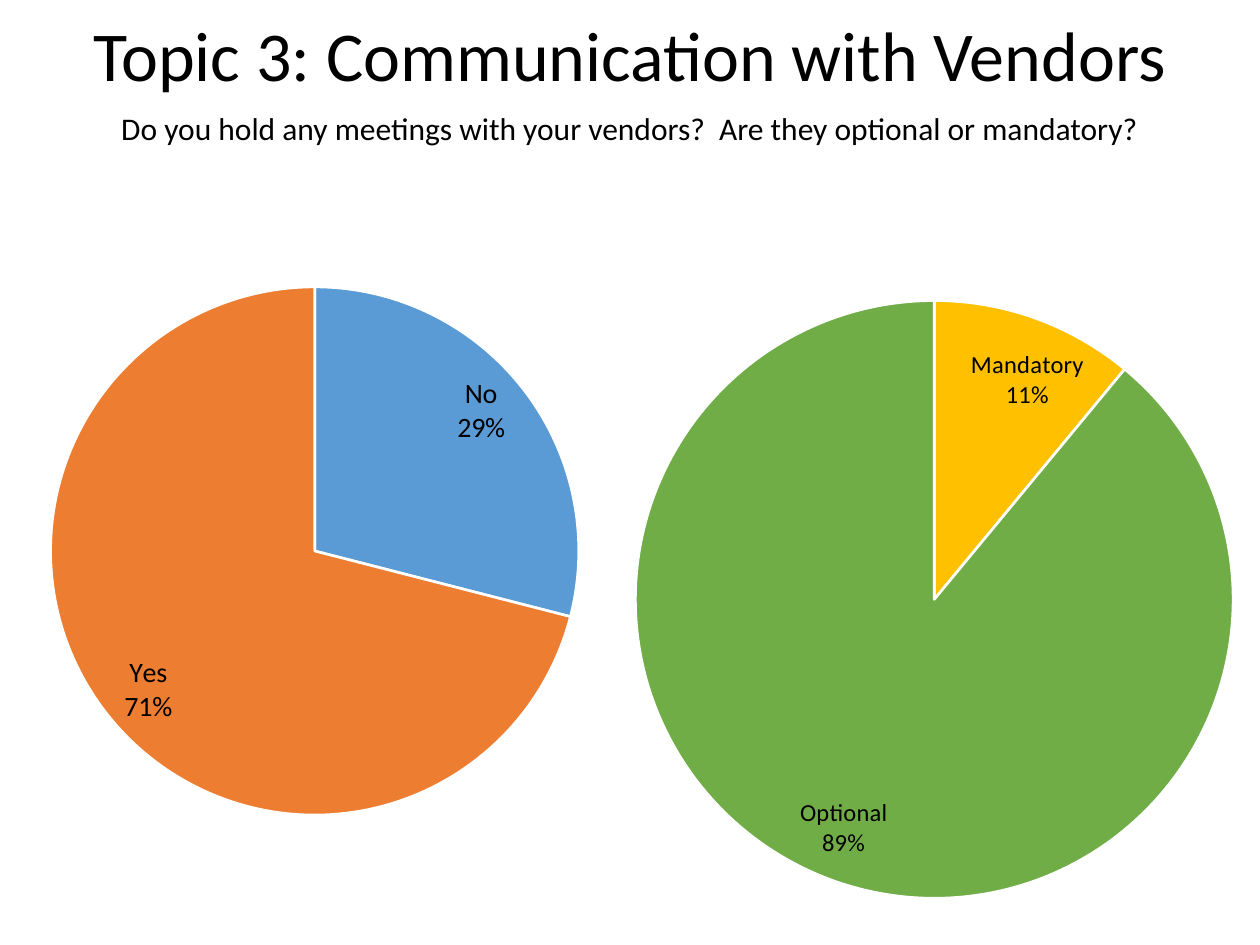
from lxml.etree import Element
from pptx import Presentation
from pptx.chart.data import CategoryChartData as Data
from pptx.dml.color import RGBColor as Rgb
from pptx.enum.chart import XL_CHART_TYPE as Kind, XL_LABEL_POSITION as Spot
from pptx.enum.text import MSO_ANCHOR as Anchor, PP_ALIGN as Align
from pptx.oxml import parse_xml
from pptx.oxml.ns import nsdecls, qn
from pptx.util import Cm, Pt

FONT = "Calibri"
TITLE = "Topic 3: Communication with Vendors"
ASK = "Do you hold any meetings with your vendors?  Are they optional or mandatory?"
PIES = [
    {"box": (0.25, 3.63, 12.83, 15.42), "plot": (0.06, 0.08, 0.83, 0.81), "size": 16,
     "parts": [("No", 29, "5B9BD5"), ("Yes", 71, "ED7D31")]},
    {"box": (12.4, 3.4, 13.0, 15.65), "plot": (0.03, 0.17, 0.93, 0.77), "size": 14,
     "parts": [("Mandatory", 11, "FFC000"), ("Optional", 89, "70AD47")]},
]


def color(code):
    return Rgb.from_string(code)


def style(font, size):
    font.name = FONT
    font.size = Pt(size)
    font.color.rgb = color("000000")


def add_text(slide, text, box, size, anchor=Anchor.TOP, space=1.0):
    frame = slide.shapes.add_textbox(*map(Cm, box)).text_frame
    frame.word_wrap = True
    frame.vertical_anchor = anchor
    line = frame.paragraphs[0]
    line.alignment = Align.CENTER
    line.line_spacing = space
    run = line.add_run()
    run.text = text
    style(run.font, size)


def set_plot(chart, plot):
    area = chart._chartSpace.chart.plotArea
    for old in area.findall(qn("c:layout")):
        area.remove(old)
    marks = '<c:layoutTarget val="inner"/><c:xMode val="edge"/><c:yMode val="edge"/>'
    marks += "".join(f'<c:{key} val="{val}"/>' for key, val in zip("xywh", plot))
    area.insert(0, parse_xml(
        f'<c:layout {nsdecls("c")}><c:manualLayout>{marks}</c:manualLayout></c:layout>'))


def add_pie(slide, box, plot, size, parts):
    names, vals, fills = zip(*parts)
    data = Data()
    data.categories = names
    data.add_series("Series 1", vals)
    chart = slide.shapes.add_chart(Kind.PIE, *map(Cm, box), data).chart
    chart.has_title = False
    chart.has_legend = False
    style(chart.font, 10)
    set_plot(chart, plot)
    pie = chart.plots[0]
    pie.vary_by_categories = True
    for i, fill in enumerate(fills):
        form = pie.series[0].points[i].format
        form.fill.solid()
        form.fill.fore_color.rgb = color(fill)
        form.line.color.rgb = color("FFFFFF")
        form.line.width = Pt(1.5)
    tags = pie.series[0].data_labels
    style(tags.font, size)
    tags.show_value = False
    tags.show_category_name = True
    tags.show_percentage = True
    tags.position = Spot.BEST_FIT
    gap = Element(qn("c:separator"))
    gap.text = "\n"
    tags._element.find(qn("c:showBubbleSize")).addnext(gap)


def main():
    deck = Presentation()
    deck.slide_width, deck.slide_height = Cm(25.4), Cm(19.05)
    slide = deck.slides.add_slide(deck.slide_layouts[6])
    add_text(slide, TITLE, (0.26, 0, 24.87, 2.07), 40, anchor=Anchor.BOTTOM, space=0.9)
    add_text(slide, ASK, (0.26, 2.07, 24.87, 1.02), 18)
    for pie in PIES:
        add_pie(slide, **pie)
    deck.save("out.pptx")


if __name__ == "__main__":
    main()
